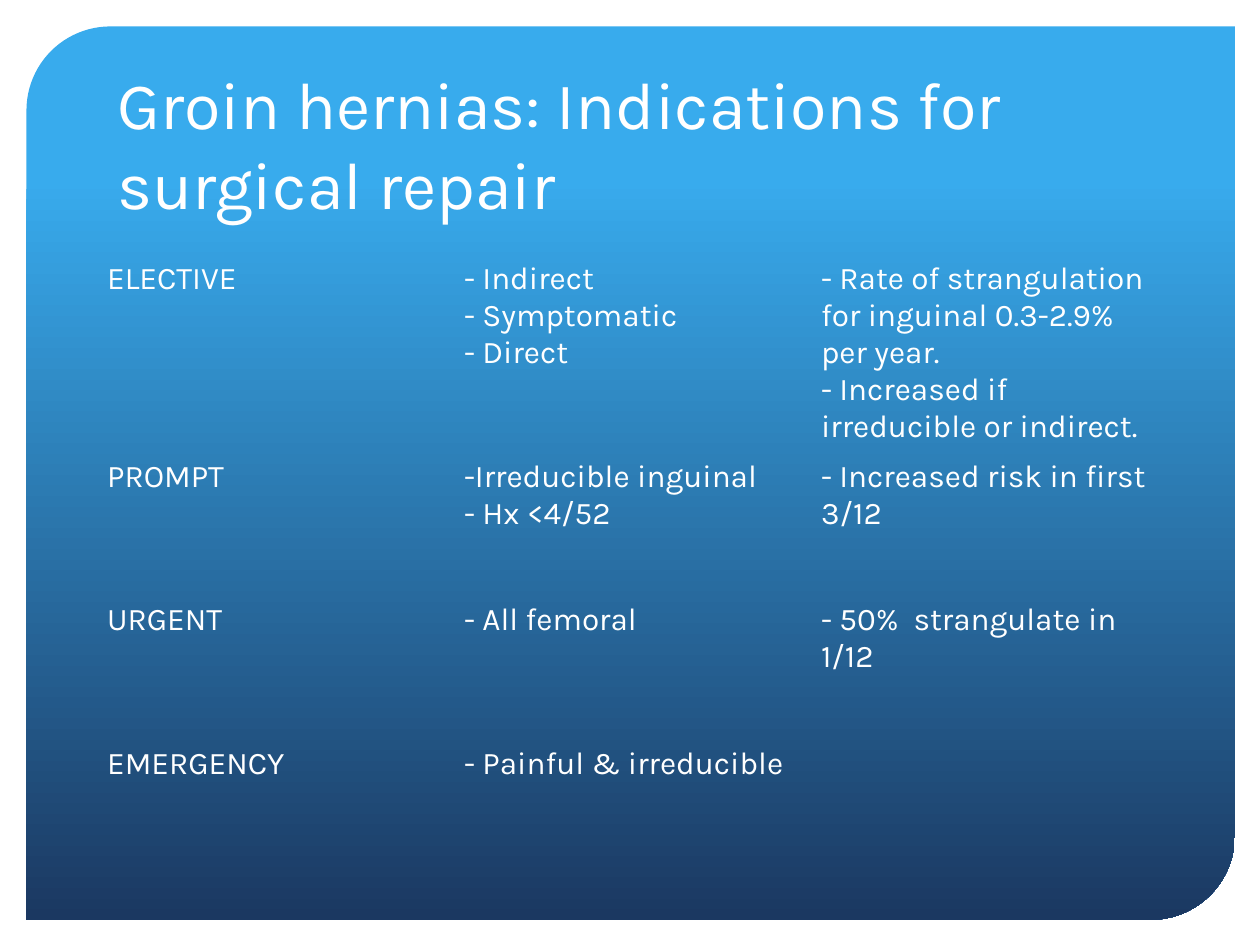
from pptx import Presentation
from pptx.dml.color import RGBColor
from pptx.enum.shapes import MSO_SHAPE as Shape
from pptx.enum.text import MSO_ANCHOR as Anchor, MSO_AUTO_SIZE as Fit, PP_ALIGN as Align
from pptx.oxml.ns import qn
from pptx.util import Inches, Pt

FONT = "Karla"
WHITE = "FFFFFF"
PLAIN_STYLE = "{2D5ABB26-0587-4C30-8999-92F81FD0307C}"  # no style, no grid
ROWS = [
    ("ELECTIVE", "- Indirect\n- Symptomatic\n- Direct",
     "- Rate of strangulation for inguinal 0.3-2.9% per year.\n"
     "- Increased if irreducible or indirect."),
    ("PROMPT", "-Irreducible inguinal\n- Hx <4/52", "- Increased risk in first 3/12"),
    ("URGENT", "- All femoral", "- 50%  strangulate in 1/12"),
    ("EMERGENCY", "- Painful & irreducible", ""),
]


def color(target, value):
    target.rgb = RGBColor.from_string(value)


def write(frame, text, size):
    """Set the text, left aligned, in the deck's font."""
    frame.text = text
    frame.word_wrap = True
    for para in frame.paragraphs:
        para.alignment = Align.LEFT
        para.font.size = Pt(size)
        for run in para.runs:
            run.font.name = FONT
            run.font.size = Pt(size)
            color(run.font.color, WHITE)


def add_panel(slide, box):
    panel = slide.shapes.add_shape(Shape.ROUND_2_DIAG_RECTANGLE, *box)
    panel.adjustments[0] = 0.094
    panel.adjustments[1] = 0
    panel.shadow.inherit = False
    panel.line.fill.background()
    panel.fill.gradient()
    panel.fill.gradient_angle = 270
    stops = [(0.17, "38ABED"), (1, "1B3861")]
    for stop, (place, value) in zip(panel.fill.gradient_stops, stops):
        stop.position = place
        color(stop.color, value)
    # The panel goes behind the title placeholder.
    slide.shapes._spTree.insert(2, panel._element)


def set_title(slide, box, text):
    title = slide.shapes.title
    title.left, title.top, title.width, title.height = box
    write(title.text_frame, text, 38)
    title.text_frame.auto_size = Fit.NONE
    title.text_frame.vertical_anchor = Anchor.BOTTOM


def add_grid(slide, box, rows):
    left, top, width, height = box
    grid = slide.shapes.add_table(len(rows), len(rows[0]), left, top, width, height).table
    grid.first_row = grid.horz_banding = False
    grid._tbl.tblPr.find(qn("a:tableStyleId")).text = PLAIN_STYLE
    for r, row in enumerate(rows):
        for c, text in enumerate(row):
            cell = grid.cell(r, c)
            cell.fill.background()
            write(cell.text_frame, text, 18)


def main():
    deck = Presentation()
    deck.slide_width, deck.slide_height = Inches(10), Inches(7.5)
    slide = deck.slides.add_slide(deck.slide_layouts[5])
    slide.background.fill.solid()
    color(slide.background.fill.fore_color, WHITE)
    add_panel(slide, [Inches(n) for n in (0.21, 0.21, 9.59, 7.09)])
    set_title(slide, [Inches(n) for n in (0.83, 0.68, 8.29, 1.14)],
              "Groin hernias: Indications for surgical repair")
    add_grid(slide, [Inches(n) for n in (0.75, 2.02, 8.5, 4.56)], ROWS)
    deck.save("out.pptx")


if __name__ == "__main__":
    main()
